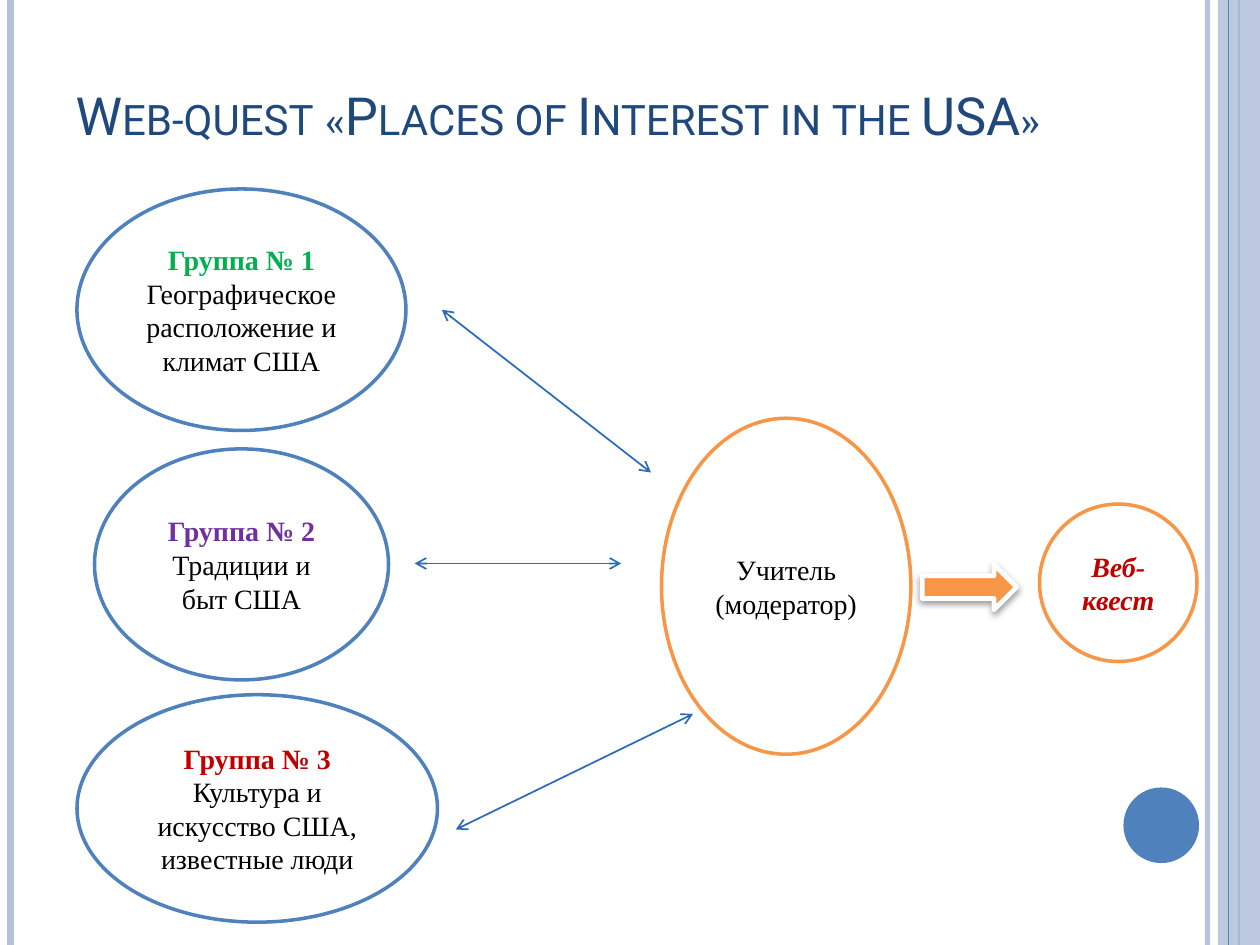
"""Build the web-quest slide: three groups, a moderator and the result."""
from lxml.etree import SubElement
from pptx import Presentation
from pptx.dml.color import RGBColor
from pptx.enum.shapes import MSO_CONNECTOR, MSO_SHAPE
from pptx.enum.text import MSO_ANCHOR, MSO_AUTO_SIZE, PP_ALIGN
from pptx.oxml.ns import qn
from pptx.util import Pt

THEME = {
    "blue": "4F81BD", "pale": "B3C1DB", "navy": "1F497D", "link": "2C6CB9",
    "orange": "F79646", "green": "00B050", "purple": "7030A0", "red": "C00000",
    "white": "FFFFFF", "black": "000000",
    "head": 30, "body": 16, "serif": "Times New Roman",
}
TITLE = [("Web-quest ", "Roboto"), ("«", "Cambria"),
         ("Places of Interest in the USA", "Roboto"), ("»", "Cambria")]
BARS = [(690, 3, "pale", 93), (6, 4.5, "pale", 100), (708, 1.5, "blue", 100)]
EDGE = (702, 0.75, "blue", 100)
GROUPS = [
    ((44, 108, 188, 138), "Группа № 1", "green",
     "Географическое расположение и климат США"),
    ((54, 256.5, 168, 132), "Группа № 2", "purple", "Традиции и быт США"),
    ((44, 397, 206, 130), "Группа № 3", "red",
     "Культура и искусство США, известные люди"),
]
LINKS = [(252.5, 177, 372, 270), (237, 322, 355, 322), (260.5, 474, 396, 408)]
TEACHER = ((378, 239, 142.5, 192), "Учитель (модератор)")
QUEST = ((594, 288, 90, 90), "Веб-квест")


def tint(name):
    return RGBColor.from_string(THEME[name])


def fade(shape, alpha):
    for node in shape._element.spPr.iter(qn("a:srgbClr")):
        SubElement(node, qn("a:alpha"), val=str(alpha * 1000))


def draw(slide, kind, box, fill, edge=None, width=2):
    shape = slide.shapes.add_shape(kind, *map(Pt, box))
    shape.shadow.inherit = False
    shape.fill.solid()
    shape.fill.fore_color.rgb = tint(fill)
    if edge:
        shape.line.color.rgb = tint(edge)
        shape.line.width = Pt(width)
    else:
        shape.line.fill.background()
    return shape


def join(slide, ends, color, width):
    line = slide.shapes.add_connector(MSO_CONNECTOR.STRAIGHT, *map(Pt, ends))
    line.line.color.rgb = tint(color)
    line.line.width = Pt(width)
    SubElement(line._element.spPr, qn("a:effectLst"))
    return line


def bar(slide, x, width, color, alpha):
    line = join(slide, (x, 0, x, 540), color, width)
    if alpha < 100:
        fade(line, alpha)


def oval(slide, box, edge, lines):
    shape = draw(slide, MSO_SHAPE.OVAL, box, "white", edge)
    frame = shape.text_frame
    frame.word_wrap = True
    frame.vertical_anchor = MSO_ANCHOR.MIDDLE
    frame.text = "\n".join(text for text, *_ in lines)
    for para, (_, color, bold, slant) in zip(frame.paragraphs, lines):
        para.alignment = PP_ALIGN.CENTER
        font = para.runs[0].font
        font.name, font.size = THEME["serif"], Pt(THEME["body"])
        font.bold, font.italic = bold, slant
        font.color.rgb = tint(color)


def head(slide):
    title = slide.shapes.title
    title.left, title.top, title.width, title.height = map(Pt, (36, 24, 588, 63))
    frame = title.text_frame
    frame.auto_size = MSO_AUTO_SIZE.NONE
    frame.vertical_anchor = MSO_ANCHOR.BOTTOM
    para = frame.paragraphs[0]
    para.alignment = PP_ALIGN.LEFT
    for text, face in TITLE:
        run = para.add_run()
        run.text = text
        run.font.name, run.font.size = face, Pt(THEME["head"])
        run.font.color.rgb = tint("navy")
        run.font._element.set("cap", "small")


def link(slide, ends):
    line = join(slide, ends, "link", 1)
    stroke = line._element.spPr.find(qn("a:ln"))
    for tag in ("a:headEnd", "a:tailEnd"):
        SubElement(stroke, qn(tag), type="arrow")


def arrow(slide):
    shape = draw(slide, MSO_SHAPE.RIGHT_ARROW, (527, 322.5, 54, 26),
                 "orange", "white", 2.75)
    glow = shape._element.spPr.find(qn("a:effectLst"))
    cast = SubElement(glow, qn("a:outerShdw"), blurRad=str(Pt(4)),
                      dist=str(Pt(2)), dir="5400000", rotWithShape="0")
    color = SubElement(cast, qn("a:srgbClr"), val=THEME["black"])
    SubElement(color, qn("a:alpha"), val="40000")


def main():
    deck = Presentation()
    deck.slide_width, deck.slide_height = Pt(720), Pt(540)
    slide = deck.slides.add_slide(deck.slide_layouts[5])
    for item in BARS:
        bar(slide, *item)
    fade(draw(slide, MSO_SHAPE.RECTANGLE, (696, 0, 24, 540), "pale"), 87)
    bar(slide, *EDGE)
    draw(slide, MSO_SHAPE.OVAL, (642, 450, 43.2, 43.2), "blue")
    head(slide)
    for box, name, color, topic in GROUPS:
        oval(slide, box, "blue", [(name, color, True, False),
                                  (topic, "black", False, False)])
    for ends in LINKS:
        link(slide, ends)
    box, text = TEACHER
    oval(slide, box, "orange", [(text, "black", False, False)])
    arrow(slide)
    box, text = QUEST
    oval(slide, box, "orange", [(text, "red", True, True)])
    deck.save("out.pptx")


if __name__ == "__main__":
    main()
